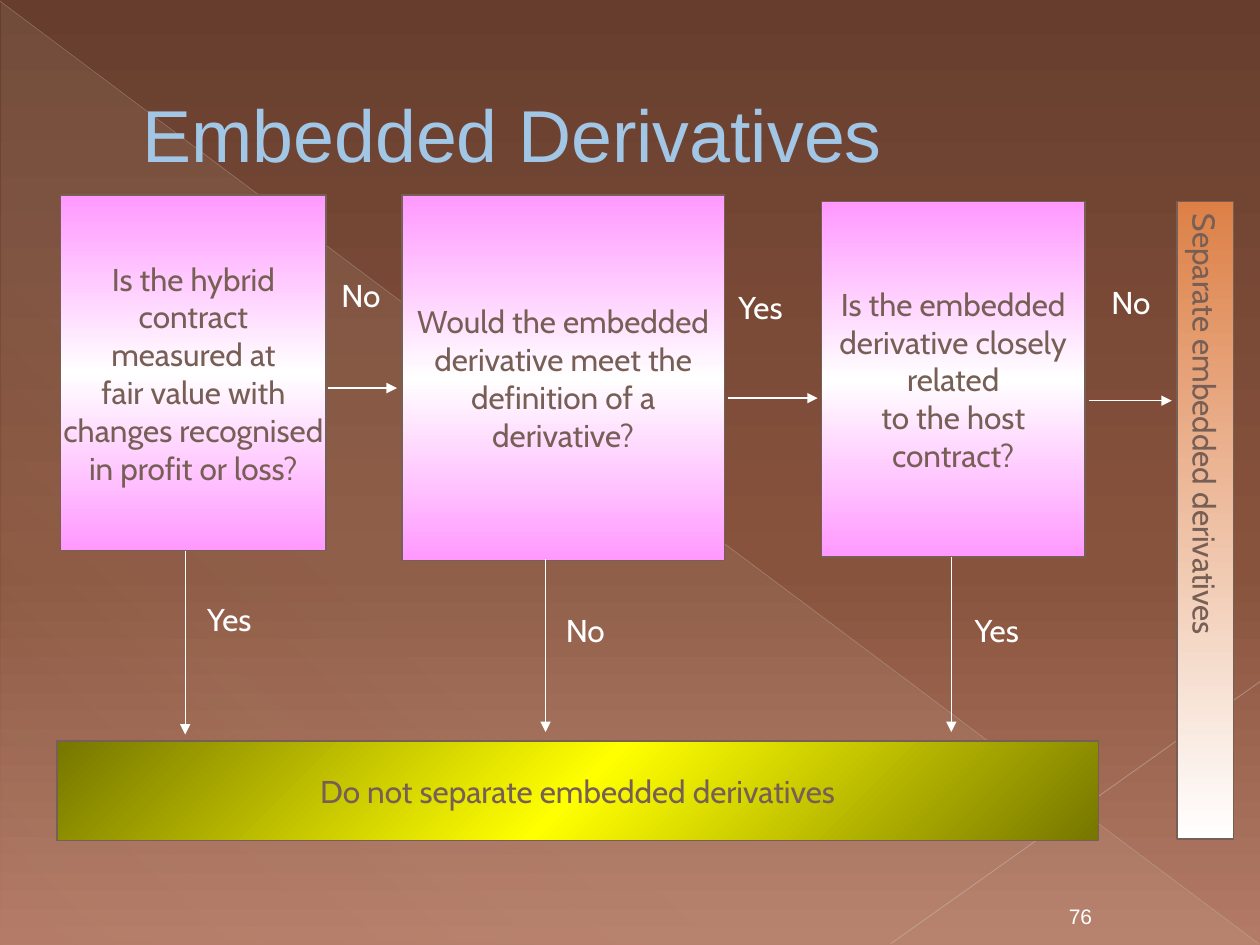
from lxml import etree
from pptx import Presentation
from pptx import util as u
from pptx.dml.color import RGBColor
from pptx.enum import shapes, text
from pptx.oxml import ns

THEME = {
    "title": ("Arial", 42, "A1C6E6"),
    "page": ("Arial", 12, "FFFFFF"),
    "label": ("Cabin", 18, "FFFFFF"),
    "body": ("Cabin", 18, "775F55"),
    "edge": "775F55",
    "arrow": "FFFFFF",
    "back": ([(0, "673E2E"), (60, "88533D"), (100, "B37B67")], 90),
    "veil": ([(0, "EBDDC3", 10), (70, "EBDDC3", 8), (100, "EBDDC3", 1)], 133),
    "pink": ([(0, "FF99FF"), (50, "FFFFFF"), (100, "FF99FF")], 90),
    "gold": ([(0, "767600"), (50, "FFFF00"), (100, "767600")], 45),
    "rust": ([(0, "DD8047"), (100, "FFFFFF")], 90),
}
TITLE = "Embedded Derivatives"
BOXES = [
    ((0.48, 1.55, 2.11, 2.82), "pink",
     ["Is the hybrid", "contract", "measured at", "fair value with",
      "changes recognised", "in profit or loss?"]),
    ((3.19, 1.55, 2.56, 2.9), "pink",
     ["Would the embedded", "derivative meet the", "definition of a", "derivative?"]),
    ((6.52, 1.6, 2.09, 2.82), "pink",
     ["Is the embedded", "derivative closely", "related", "to the host", "contract?"]),
    ((0.45, 5.88, 8.27, 0.79), "gold", ["Do not separate embedded derivatives"]),
    ((9.34, 1.6, 0.45, 5.06), "rust", ["Separate embedded derivatives"]),
]
ACROSS = [(2.6, 3.15, 3.08), (5.78, 6.49, 3.16), (8.64, 9.3, 3.18)]
DOWN = [(1.47, 4.37, 5.83), (4.33, 4.44, 5.81), (7.55, 4.42, 5.81)]
LABELS = [
    ("No", 2.61, 2.14, 0.51), ("Yes", 5.69, 2.24, 0.69), ("No", 8.72, 2.2, 0.51),
    ("Yes", 1.46, 4.71, 0.72), ("No", 4.39, 4.8, 0.51), ("Yes", 7.62, 4.8, 0.58),
]
RAYS = [((0, 0.01, 9.99, 7.49), "C8BCB8", 0.39, 35),
        ((10, 5.41, 7.07, 7.49), "CEC3BF", 0.47, 45)]


def inch(nums):
    return [u.Inches(n) for n in nums]


def sub(node, tag, **atts):
    return etree.SubElement(node, ns.qn(tag), **atts)


def shade(owner, fill, name):
    stops, angle = THEME[name]
    fill.gradient()
    grad = owner.element.find(".//" + ns.qn("a:gradFill"))
    for kid in list(grad):
        grad.remove(kid)
    group = sub(grad, "a:gsLst")
    for pos, tint, *alpha in stops:
        stop = sub(group, "a:gs", pos=str(pos * 1000))
        color = sub(stop, "a:srgbClr", val=tint)
        for part in alpha:
            sub(color, "a:alpha", val=str(part * 1000))
    sub(grad, "a:lin", ang=str(angle * 60000), scaled="0")


def write(frame, lines, style, align=text.PP_ALIGN.CENTER):
    face, size, tint = THEME[style]
    for i, line in enumerate(lines):
        para = frame.paragraphs[0] if i == 0 else frame.add_paragraph()
        para.alignment = align
        run = para.add_run()
        run.text = line
        run.font.name, run.font.size = face, u.Pt(size)
        run.font.color.rgb = RGBColor.from_string(tint)


def block(slide, kind, area, fill):
    shape = slide.shapes.add_shape(kind, *inch(area))
    shape.shadow.inherit = False
    shade(shape, shape.fill, fill)
    return shape


def label(slide, area, words, style, wrap=False):
    frame = slide.shapes.add_textbox(*inch(area)).text_frame
    frame.word_wrap = wrap
    write(frame, [words], style)
    return frame


def rule(slide, ends, tint, width):
    line = slide.shapes.add_connector(shapes.MSO_CONNECTOR.STRAIGHT, *inch(ends))
    line.line.color.rgb = RGBColor.from_string(tint)
    line.line.width = u.Pt(width)
    sub(line.element.spPr, "a:effectLst")
    return line


def arrow(slide, ends):
    line = rule(slide, ends, THEME["arrow"], 0.75)
    sub(line.line._get_or_add_ln(), "a:tailEnd", type="triangle")


def main():
    deck = Presentation()
    deck.slide_width, deck.slide_height = inch((10, 7.5))
    slide = deck.slides.add_slide(deck.slide_layouts[5])
    shade(slide, slide.background.fill, "back")

    veil = block(slide, shapes.MSO_SHAPE.RIGHT_TRIANGLE, (0.01, 0.02, 9.99, 7.48), "veil")
    veil.line.fill.background()
    for ends, tint, width, alpha in RAYS:
        ray = rule(slide, ends, tint, width)
        color = ray.element.spPr.find(".//" + ns.qn("a:srgbClr"))
        sub(color, "a:alpha", val=str(alpha * 1000))

    title = slide.shapes.title
    title.left, title.top, title.width, title.height = inch((0.5, 0.29, 9, 1.53))
    slide.shapes._spTree.append(title.element)
    title.text_frame.vertical_anchor = text.MSO_ANCHOR.MIDDLE
    write(title.text_frame, [TITLE], "title", text.PP_ALIGN.LEFT)
    props = title.text_frame.paragraphs[0]._p.get_or_add_pPr()
    props.set("marL", str(u.Inches(0.53)))
    props.set("indent", "0")

    page = label(slide, (8.3, 7.09, 0.55, 0.33), "76", "page", True)
    page.vertical_anchor = text.MSO_ANCHOR.BOTTOM

    for area, fill, lines in BOXES:
        box = block(slide, shapes.MSO_SHAPE.RECTANGLE, area, fill)
        box.line.color.rgb = RGBColor.from_string(THEME["edge"])
        box.line.width = u.Pt(1)
        frame = box.text_frame
        frame.word_wrap = False
        frame.vertical_anchor = text.MSO_ANCHOR.MIDDLE
        write(frame, lines, "body")
        if fill == "rust":
            frame._txBody.bodyPr.set("vert", "eaVert")

    for start, end, y in ACROSS:
        arrow(slide, (start, y, end, y))
    for x, start, end in DOWN:
        arrow(slide, (x, start, x, end))
    for words, x, y, width in LABELS:
        label(slide, (x, y, width, 0.4), words, "label")

    deck.save("out.pptx")


if __name__ == "__main__":
    main()
